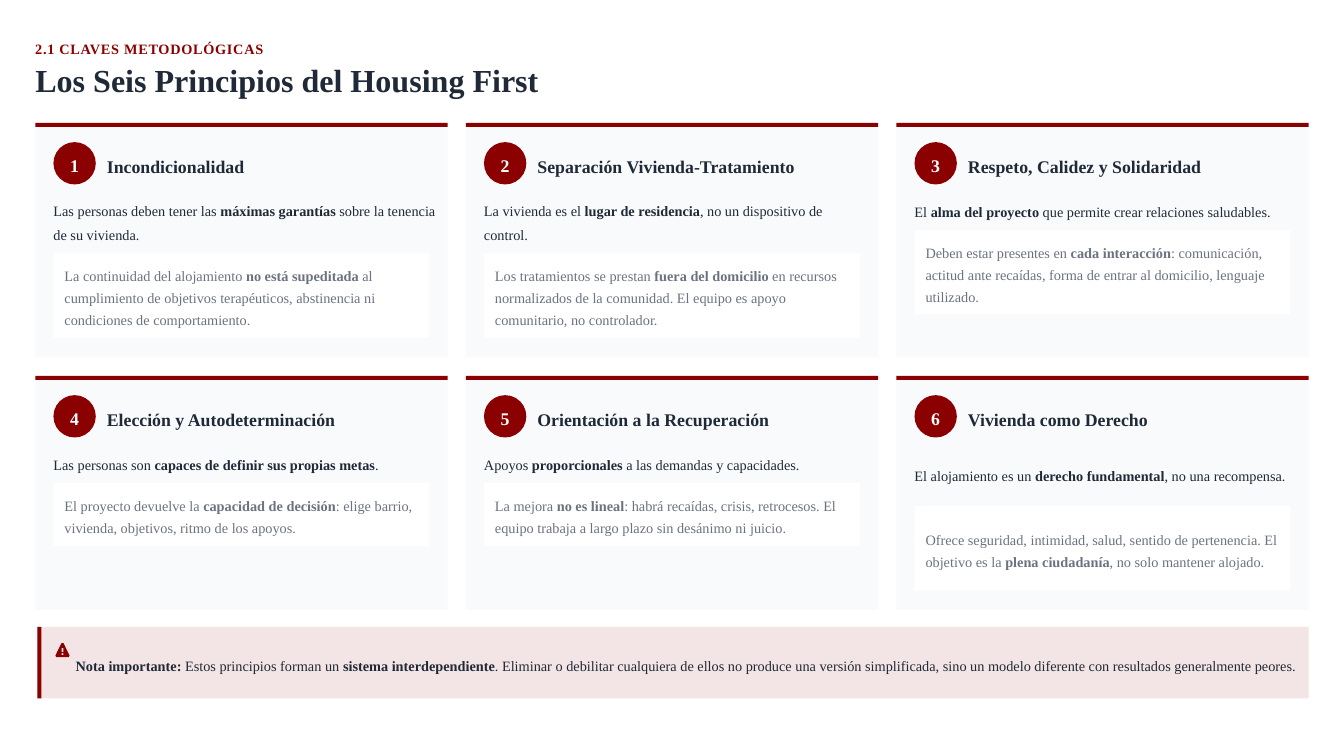
from dataclasses import dataclass
from lxml.etree import SubElement
from pptx import Presentation
from pptx.dml.color import RGBColor
from pptx.enum.shapes import MSO_SHAPE as Shape
from pptx.enum.text import MSO_ANCHOR as Anchor, MSO_AUTO_SIZE as AutoSize, PP_ALIGN as Align
from pptx.oxml.ns import qn
from pptx.util import Inches, Pt


@dataclass(frozen=True)
class Theme:
    font: str = "Times New Roman"
    accent: str = "8B0000"
    ink: str = "1F2937"
    muted: str = "6B7280"
    card: str = "F9FAFB"
    white: str = "FFFFFF"
    title_size: float = 22.9
    heading_size: float = 12.7
    body_size: float = 10.2


@dataclass(frozen=True)
class Box:
    left: float
    top: float
    width: float
    height: float

    def inner(self, dx, dy, width, height):
        return Box(self.left + dx, self.top + dy, width, height)

    def emu(self):
        return [Inches(n) for n in (self.left, self.top, self.width, self.height)]


THEME = Theme()
SLIDE_WIDTH, SLIDE_HEIGHT = 13.33, 7.5
MARGIN = 0.35
CONTENT_WIDTH = SLIDE_WIDTH - 2 * MARGIN
COLUMNS, GUTTER = 3, 0.18
CARD_WIDTH = (CONTENT_WIDTH - (COLUMNS - 1) * GUTTER) / COLUMNS
CARD_HEIGHT, GRID_TOP, ROW_STEP = 2.32, 1.22, 2.51
PADDING, BAR = 0.18, 0.04
STATEMENT_LINE, DETAIL_LINE = 0.23, 0.21

# Heading, statement, lines reserved for it, detail, lines reserved for it
PRINCIPLES = [
    ("Incondicionalidad",
     "Las personas deben tener las **máximas garantías** sobre la tenencia de su vivienda.", 2,
     "La continuidad del alojamiento **no está supeditada** al cumplimiento de objetivos "
     "terapéuticos, abstinencia ni condiciones de comportamiento.", 3),
    ("Separación Vivienda-Tratamiento",
     "La vivienda es el **lugar de residencia**, no un dispositivo de control.", 2,
     "Los tratamientos se prestan **fuera del domicilio** en recursos normalizados de la "
     "comunidad. El equipo es apoyo comunitario, no controlador.", 3),
    ("Respeto, Calidez y Solidaridad",
     "El **alma del proyecto** que permite crear relaciones saludables.", 1,
     "Deben estar presentes en **cada interacción**: comunicación, actitud ante recaídas, "
     "forma de entrar al domicilio, lenguaje utilizado.", 3),
    ("Elección y Autodeterminación",
     "Las personas son **capaces de definir sus propias metas**.", 1,
     "El proyecto devuelve la **capacidad de decisión**: elige barrio, vivienda, objetivos, "
     "ritmo de los apoyos.", 2),
    ("Orientación a la Recuperación",
     "Apoyos **proporcionales** a las demandas y capacidades.", 1,
     "La mejora **no es lineal**: habrá recaídas, crisis, retrocesos. El equipo trabaja a "
     "largo plazo sin desánimo ni juicio.", 2),
    ("Vivienda como Derecho",
     "El alojamiento es un **derecho fundamental**, no una recompensa.", 2,
     "Ofrece seguridad, intimidad, salud, sentido de pertenencia. El objetivo es la "
     "**plena ciudadanía**, no solo mantener alojado.", 3),
]
NOTE = ("**Nota importante:** Estos principios forman un **sistema interdependiente**. Eliminar o "
        "debilitar cualquiera de ellos no produce una versión simplificada, sino un modelo "
        "diferente con resultados generalmente peores.")


def write(shape, text, size, color, spacing, align=Align.LEFT, left=0, right=0):
    """Fill a shape with one paragraph; text between ** marks is bold."""
    frame = shape.text_frame
    frame.word_wrap = True
    frame.auto_size = AutoSize.NONE
    frame.vertical_anchor = Anchor.MIDDLE
    frame.margin_left, frame.margin_right = Inches(left), Inches(right)
    frame.margin_top = frame.margin_bottom = 0
    paragraph = frame.paragraphs[0]
    paragraph.alignment = align
    paragraph.line_spacing = spacing
    for index, part in enumerate(text.split("**")):
        if part:
            run = paragraph.add_run()
            run.text = part
            run.font.name = THEME.font
            run.font.size = Pt(size)
            run.font.bold = index % 2 == 1
            run.font.color.rgb = RGBColor.from_string(color)
    return paragraph


def paint(shape, color):
    shape.shadow.inherit = False
    shape.fill.solid()
    shape.fill.fore_color.rgb = RGBColor.from_string(color)
    shape.line.fill.background()


def add_block(slide, box, color, kind=Shape.RECTANGLE):
    shape = slide.shapes.add_shape(kind, *box.emu())
    paint(shape, color)
    return shape


def add_label(slide, box, *args):
    return write(slide.shapes.add_textbox(*box.emu()), *args)


def add_header(slide, box):
    eyebrow = add_label(slide, box.inner(0, 0, box.width, 0.21), "**2.1 CLAVES METODOLÓGICAS**",
                        THEME.body_size, THEME.accent, 1.3)
    eyebrow.runs[0].font._element.set("spc", "50")
    title = slide.shapes.title
    title.left, title.top, title.width, title.height = box.inner(0, 0.29, box.width, 0.35).emu()
    write(title, "**Los Seis Principios del Housing First**", THEME.title_size, THEME.ink, 0.9)


def add_card(slide, box, number, heading, statement, statement_lines, detail, detail_lines):
    add_block(slide, box, THEME.card)
    add_block(slide, box.inner(0, 0, box.width, BAR), THEME.accent)
    badge = add_block(slide, box.inner(PADDING, 0.19, 0.42, 0.42), THEME.accent, Shape.OVAL)
    write(badge, f"**{number}**", THEME.heading_size, THEME.white, 1.2, Align.CENTER)
    add_label(slide, box.inner(0.71, 0.28, box.width - 0.8, 0.25), f"**{heading}**",
              THEME.heading_size, THEME.ink, 1.2)
    statement_top, statement_height = 0.73, statement_lines * STATEMENT_LINE
    add_label(slide, box.inner(PADDING, statement_top, 3.81, statement_height), statement,
              THEME.body_size, THEME.ink, 1.4)
    panel = add_block(slide, box.inner(PADDING, statement_top + statement_height + 0.1,
                                       box.width - 2 * PADDING, (detail_lines + 1) * DETAIL_LINE),
                      THEME.white)
    write(panel, detail, THEME.body_size, THEME.muted, 1.3, left=0.11, right=0.03)


def add_warning_icon(slide, box):
    """Triangle with clipped corners and a cut-out exclamation mark, on a 100-unit grid."""
    builder = slide.shapes.build_freeform(43, 0, scale=Inches(box.width) / 100)
    builder.add_line_segments([(57, 0), (100, 88), (94, 100), (6, 100), (0, 88)])
    for top, bottom in ((34, 64), (71, 85)):
        builder.move_to(44, top)
        builder.add_line_segments([(44, bottom), (56, bottom), (56, top)])
    paint(builder.convert_to_shape(Inches(box.left), Inches(box.top)), THEME.accent)


def add_note(slide, box):
    banner = add_block(slide, box, THEME.accent)
    color = banner.fill._xPr.find(".//" + qn("a:srgbClr"))
    SubElement(color, qn("a:alpha")).set("val", "10000")
    write(banner, NOTE, THEME.body_size, THEME.ink, 1.3, left=0.38, right=0.07)
    add_block(slide, box.inner(0, 0, BAR, box.height), THEME.accent)
    add_warning_icon(slide, box.inner(PADDING, 0.16, 0.14, 0.14))


def main():
    presentation = Presentation()
    presentation.slide_width, presentation.slide_height = Inches(SLIDE_WIDTH), Inches(SLIDE_HEIGHT)
    slide = presentation.slides.add_slide(presentation.slide_layouts[5])
    add_header(slide, Box(MARGIN, 0.35, CONTENT_WIDTH, 0.64))
    for index, principle in enumerate(PRINCIPLES):
        row, column = divmod(index, COLUMNS)
        box = Box(MARGIN + column * (CARD_WIDTH + GUTTER), GRID_TOP + row * ROW_STEP,
                  CARD_WIDTH, CARD_HEIGHT)
        add_card(slide, box, index + 1, *principle)
    add_note(slide, Box(MARGIN + 0.02, 6.22, CONTENT_WIDTH - 0.02, 0.71))
    presentation.save("out.pptx")


if __name__ == "__main__":
    main()
